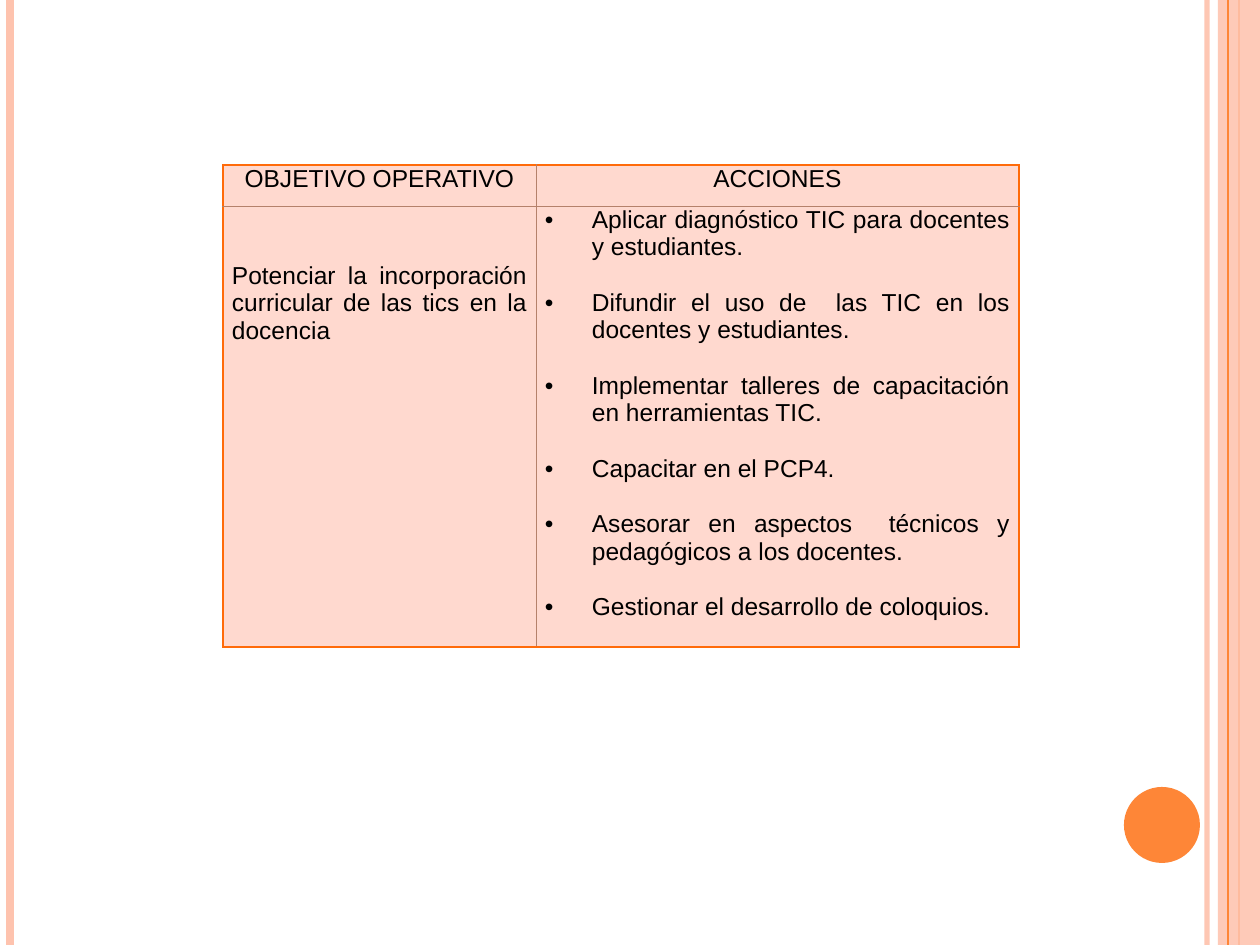
from dataclasses import dataclass

from lxml import etree
from pptx import Presentation
from pptx import util as u
from pptx.dml.color import RGBColor
from pptx.enum import shapes, text
from pptx.oxml.ns import qn

PX = 914400 // 126
WIDTH, HEIGHT = 1260, 945
COLORS = {
    "orange": "FE8637",
    "peach": "FEC3AE",
    "border": "FF6B0A",
    "divider": "B5816B",
    "cell": "FFD9CF",
    "text": "000000",
}
ACTIONS = [
    "Aplicar diagnóstico TIC para docentes y estudiantes.",
    "Difundir el uso de  las TIC en los docentes y estudiantes.",
    "Implementar talleres de capacitación en herramientas TIC.",
    "Capacitar en el PCP4.",
    "Asesorar en aspectos  técnicos y pedagógicos a los docentes.",
    "Gestionar el desarrollo de coloquios.",
]


@dataclass
class Stripe:
    x: int
    color: str
    points: float
    opacity: int = 100


@dataclass
class CellText:
    paragraphs: list[str]
    align: text.PP_ALIGN = text.PP_ALIGN.JUSTIFY
    top: int = 0
    bulleted: bool = False


BACK_STRIPES = [
    Stripe(1207, "peach", 3, 93),
    Stripe(10, "peach", 4.5),
    Stripe(1239, "orange", 1.5),
]
FRONT_STRIPE = Stripe(1228, "orange", 0.75)
ROWS = [
    [CellText(["OBJETIVO OPERATIVO"], text.PP_ALIGN.CENTER),
     CellText(["ACCIONES"], text.PP_ALIGN.CENTER)],
    [CellText(["Potenciar la incorporación curricular de las tics en la docencia"], top=56),
     CellText(ACTIONS, bulleted=True)],
]
COLUMN_WIDTHS = [313, 483]
ROW_HEIGHTS = [41, 441]


def px(length: int) -> u.Emu:
    return u.Emu(length * PX)


def rgb(name: str) -> RGBColor:
    return RGBColor.from_string(COLORS[name])


def set_opacity(element, percent: int) -> None:
    color = element.find(".//" + qn("a:srgbClr"))
    etree.SubElement(color, qn("a:alpha")).set("val", str(percent * 1000))


def draw_stripe(slide, stripe: Stripe) -> None:
    line = slide.shapes.add_connector(
        shapes.MSO_CONNECTOR.STRAIGHT, px(stripe.x), 0, px(stripe.x), px(HEIGHT))
    line.line.color.rgb = rgb(stripe.color)
    line.line.width = u.Pt(stripe.points)
    properties = line._element.spPr
    if stripe.opacity < 100:
        set_opacity(properties, stripe.opacity)
    etree.SubElement(properties, qn("a:effectLst"))


def draw_solid(slide, kind, left: int, top: int, width: int, height: int, color: str):
    solid = slide.shapes.add_shape(kind, px(left), px(top), px(width), px(height))
    solid.shadow.inherit = False
    solid.fill.solid()
    solid.fill.fore_color.rgb = rgb(color)
    solid.line.fill.background()
    return solid


def set_borders(cell, row: int, column: int) -> None:
    """Orange on the table's outer edge, a thin divider inside."""
    outer = {"L": column == 0, "R": column == len(COLUMN_WIDTHS) - 1,
             "T": row == 0, "B": row == len(ROW_HEIGHTS) - 1}
    properties = cell._tc.get_or_add_tcPr()
    for index, (side, is_outer) in enumerate(outer.items()):
        edge = etree.Element(qn(f"a:ln{side}"), w=str(u.Pt(1 if is_outer else 0.5)))
        fill = etree.SubElement(edge, qn("a:solidFill"))
        color = COLORS["border" if is_outer else "divider"]
        etree.SubElement(fill, qn("a:srgbClr"), val=color)
        properties.insert(index, edge)


def add_bullet(paragraph) -> None:
    properties = paragraph._p.get_or_add_pPr()
    properties.set("marL", str(px(47)))
    properties.set("indent", str(-px(47)))
    etree.SubElement(properties, qn("a:buFont"), typeface="Arial")
    etree.SubElement(properties, qn("a:buChar"), char="•")


def fill_cell(cell, content: CellText) -> None:
    cell.fill.solid()
    cell.fill.fore_color.rgb = rgb("cell")
    cell.margin_left = cell.margin_right = px(9)
    cell.margin_top, cell.margin_bottom = px(content.top), 0
    frame = cell.text_frame
    frame.text = "\n".join(content.paragraphs)
    for index, paragraph in enumerate(frame.paragraphs):
        if content.bulleted:
            add_bullet(paragraph)
        if index:
            paragraph.space_before = u.Pt(16)
        paragraph.alignment = content.align
        paragraph.font.name = "Arial"
        paragraph.font.size = u.Pt(14)
        paragraph.font.color.rgb = rgb("text")


def draw_plan(slide) -> None:
    plan = slide.shapes.add_table(
        len(ROW_HEIGHTS), len(COLUMN_WIDTHS), px(223), px(165),
        px(sum(COLUMN_WIDTHS)), px(sum(ROW_HEIGHTS))).table
    plan.first_row = plan.horz_banding = False
    for column, width in zip(plan.columns, COLUMN_WIDTHS):
        column.width = px(width)
    for row, height in zip(plan.rows, ROW_HEIGHTS):
        row.height = px(height)
    for r, contents in enumerate(ROWS):
        for c, content in enumerate(contents):
            fill_cell(plan.cell(r, c), content)
            set_borders(plan.cell(r, c), r, c)


def main() -> None:
    deck = Presentation()
    deck.slide_width, deck.slide_height = u.Inches(10), u.Inches(7.5)
    slide = deck.slides.add_slide(deck.slide_layouts[6])
    for stripe in BACK_STRIPES:
        draw_stripe(slide, stripe)
    band = draw_solid(slide, shapes.MSO_SHAPE.RECTANGLE, 1218, 0, WIDTH - 1218, HEIGHT, "peach")
    set_opacity(band._element.spPr, 87)
    draw_stripe(slide, FRONT_STRIPE)
    draw_solid(slide, shapes.MSO_SHAPE.OVAL, 1124, 787, 76, 76, "orange")
    draw_plan(slide)
    deck.save("out.pptx")


if __name__ == "__main__":
    main()
